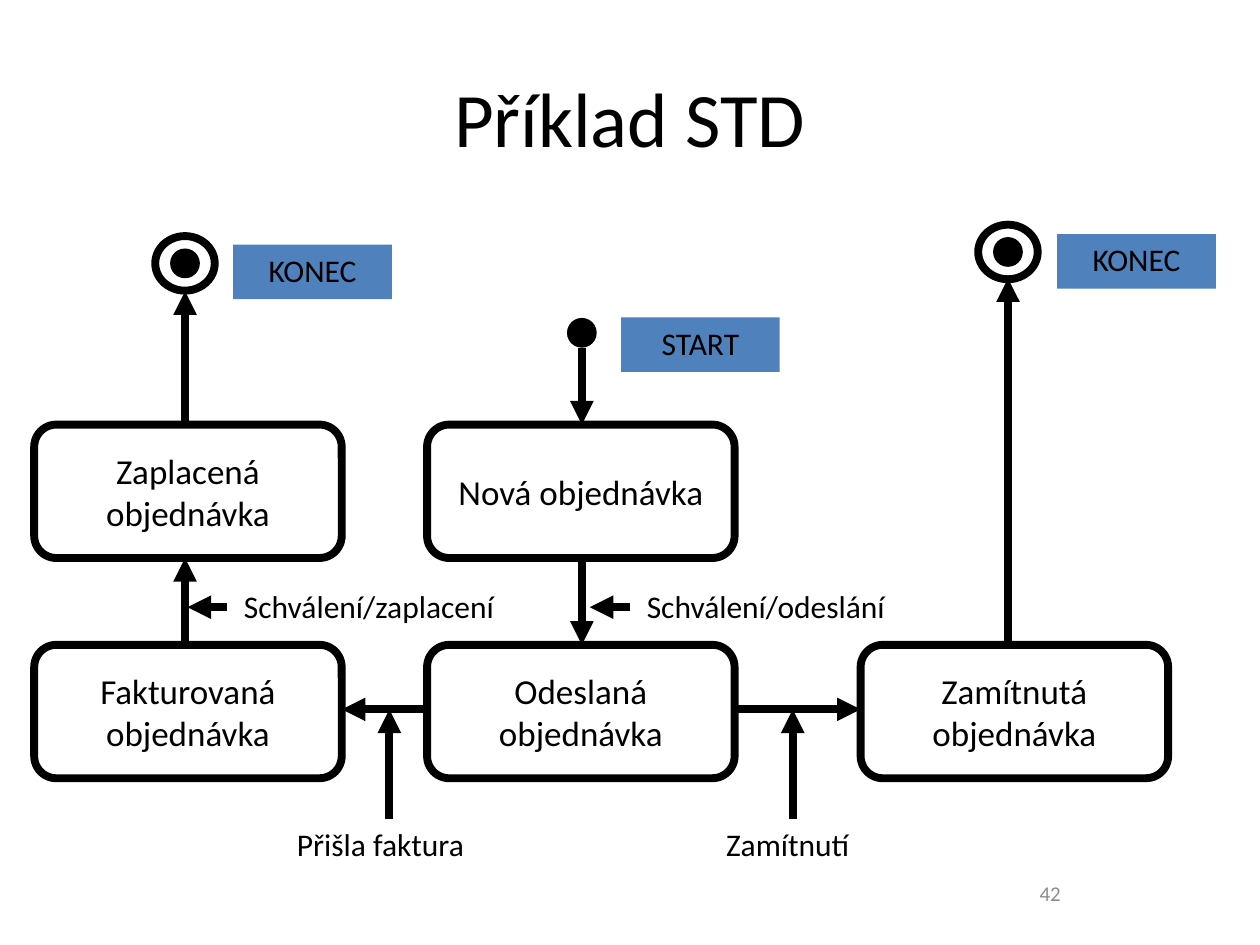
"""Build the state transition diagram slide for an order."""
from lxml import etree
from pptx import Presentation
from pptx import util as u
from pptx.dml.color import RGBColor
from pptx.enum import shapes, text
from pptx.oxml.ns import qn

BLACK, BLUE, GREY = "000000", "4F81BD", "8C8C8C"
TOP, MIDDLE = text.MSO_ANCHOR.TOP, text.MSO_ANCHOR.MIDDLE
KIND = shapes.MSO_SHAPE


def paint(fill, color):
    fill.solid()
    fill.fore_color.rgb = RGBColor.from_string(color)


def write(sp, content, size, anchor=TOP, color=BLACK, wrap=True):
    tf = sp.text_frame
    tf.word_wrap = wrap
    tf.vertical_anchor = anchor
    p = tf.paragraphs[0]
    p.alignment = text.PP_ALIGN.CENTER
    for i, line in enumerate(content.split("\n")):
        if i:
            p.add_line_break()
        r = p.add_run()
        r.text = line
        r.font.name = "Calibri"
        r.font.size = u.Pt(size)
        paint(r.font.fill, color)


prs = Presentation()
prs.slide_width, prs.slide_height = u.Cm(25.4), u.Cm(19.05)
s = prs.slides.add_slide(prs.slide_layouts[6])

texts = [
    ("Příklad STD", 1.27, 0.76, 22.86, 3.18, 44, MIDDLE, BLACK),
    ("42", 18.21, 17.35, 5.92, 1.32, 12, MIDDLE, GREY),
    ("Přišla faktura", 4.57, 16.51, 6.2, 1.02, 18, TOP, BLACK),
    ("Zamítnutí", 12.78, 16.51, 6.2, 1.02, 18, TOP, BLACK),
    ("Schválení/zaplacení", 4.34, 11.71, 6.2, 1.02, 18, TOP, BLACK),
    ("Schválení/odeslání", 12.34, 11.71, 6.2, 1.02, 18, TOP, BLACK),
]
for content, x, y, w, h, size, anchor, color in texts:
    sp = s.shapes.add_textbox(u.Cm(x), u.Cm(y), u.Cm(w), u.Cm(h))
    write(sp, content, size, anchor, color)

columns = (0.69, 8.61, 17.35)
rows = (8.56, 13)
box_w, box_h = 6.2, 2.69
states = [
    ("Zaplacená\nobjednávka", 0, 0),
    ("Nová objednávka", 1, 0),
    ("Fakturovaná\nobjednávka", 0, 1),
    ("Odeslaná\nobjednávka", 1, 1),
    ("Zamítnutá\nobjednávka", 2, 1),
]
for name, col, row in states:
    sp = s.shapes.add_shape(KIND.FLOWCHART_ALTERNATE_PROCESS, u.Cm(columns[col]),
                            u.Cm(rows[row]), u.Cm(box_w), u.Cm(box_h))
    sp.shadow.inherit = False
    sp.fill.background()
    sp.line.width = u.Pt(4.5)
    paint(sp.line.fill, BLACK)
    write(sp, name, 20, MIDDLE, wrap=False)

tags = [("START", 12.52, 6.4), ("KONEC", 4.7, 4.93), ("KONEC", 21.31, 4.72)]
for name, x, y in tags:
    sp = s.shapes.add_shape(KIND.RECTANGLE, u.Cm(x), u.Cm(y), u.Cm(3.2), u.Cm(1.1))
    sp.shadow.inherit = False
    paint(sp.fill, BLUE)
    sp.line.fill.background()
    write(sp, name, 18)

left, middle, right = 3.73, 11.73, 20.32
dots = [(middle, 6.71), (left, 5.31), (right, 5.08)]
for x, y in dots:
    sp = s.shapes.add_shape(KIND.OVAL, u.Cm(x - 0.3), u.Cm(y - 0.3), u.Cm(0.6), u.Cm(0.6))
    sp.shadow.inherit = False
    paint(sp.fill, BLACK)
    sp.line.fill.background()
for x, y in dots[1:]:
    sp = s.shapes.add_shape(KIND.OVAL, u.Cm(x - 0.6), u.Cm(y - 0.55), u.Cm(1.2), u.Cm(1.1))
    sp.shadow.inherit = False
    sp.fill.background()
    sp.line.width = u.Pt(4.5)
    paint(sp.line.fill, BLACK)

upper, lower = rows
flow, event = lower + 1.3, 12.24
arrows = [
    (middle, 7.01, middle, upper),
    (middle, upper + box_h, middle, lower),
    (left, lower, left, upper + box_h),
    (left, upper, left, 5.87),
    (right, lower, right, 5.61),
    (columns[1], flow, columns[0] + box_w, flow),
    (columns[1] + box_w, flow, columns[2], flow),
    (7.85, 16.51, 7.85, flow),
    (15.98, 16.51, 15.98, flow),
    (4.57, event, 3.78, event),
    (12.7, event, 11.89, event),
]
for x1, y1, x2, y2 in arrows:
    c = s.shapes.add_connector(shapes.MSO_CONNECTOR.STRAIGHT,
                               u.Cm(x1), u.Cm(y1), u.Cm(x2), u.Cm(y2))
    c.line.width = u.Pt(4.5)
    paint(c.line.fill, BLACK)
    etree.SubElement(c.line._get_or_add_ln(), qn("a:tailEnd"), type="triangle")
    etree.SubElement(c._element.spPr, qn("a:effectLst"))

prs.save("out.pptx")
